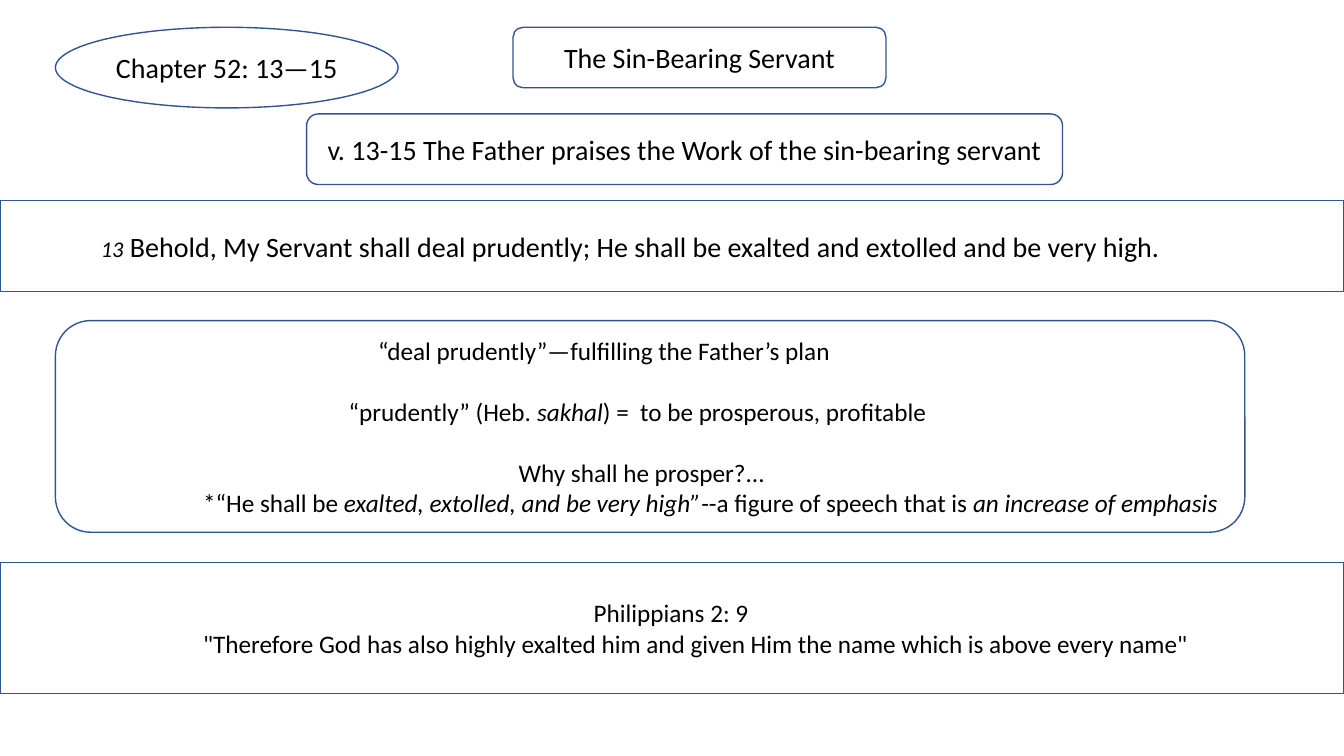
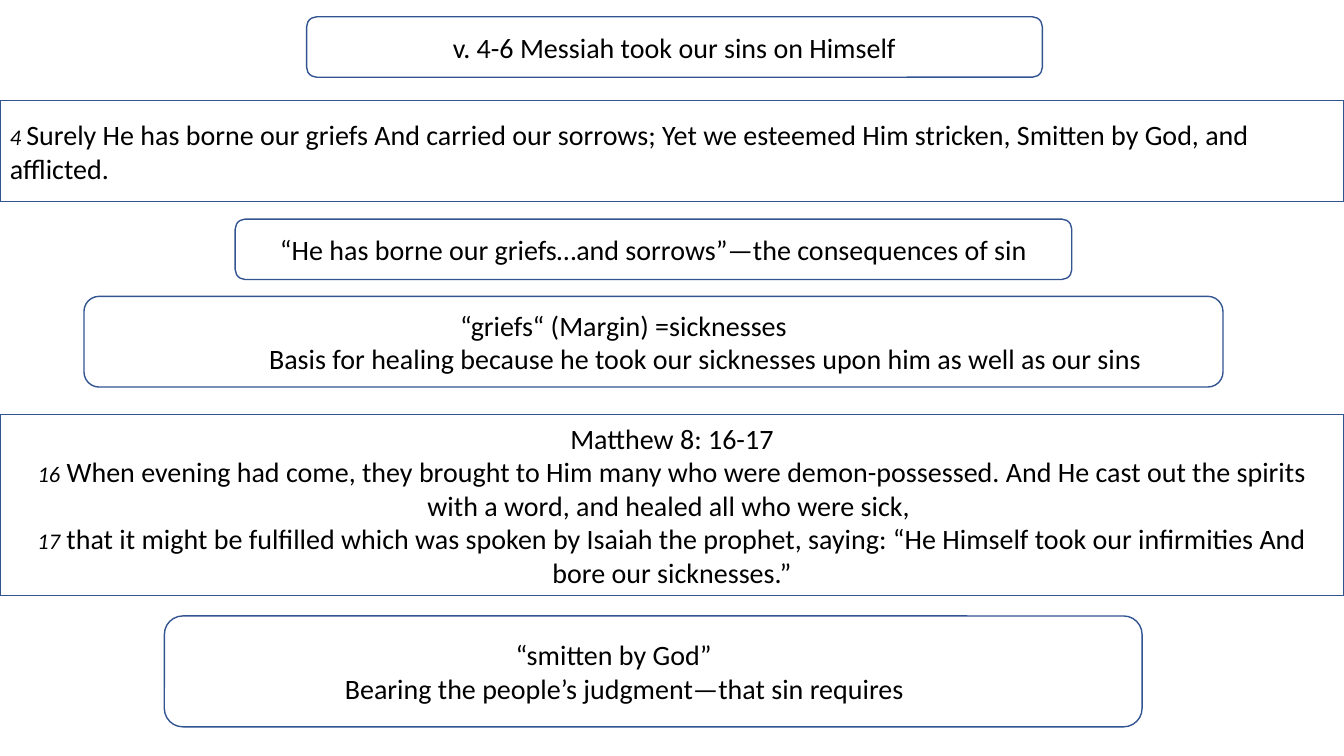
from dataclasses import dataclass

from pptx import Presentation
from pptx.dml.color import RGBColor
from pptx.enum import shapes, text
from pptx.util import Pt

OVAL = shapes.MSO_SHAPE.OVAL
ROUNDED = shapes.MSO_SHAPE.ROUNDED_RECTANGLE
BAND = shapes.MSO_SHAPE.RECTANGLE
LEFT, CENTER = text.PP_ALIGN.LEFT, text.PP_ALIGN.CENTER


@dataclass(frozen=True)
class Theme:
    font: str = "Calibri"
    ink: RGBColor = RGBColor(0, 0, 0)
    paper: RGBColor = RGBColor(0xFF, 0xFF, 0xFF)
    outline: RGBColor = RGBColor(0x32, 0x54, 0x91)
    line_width: float = 1
    body: float = 20
    note: float = 18
    verse: float = 16
    width: float = 960
    height: float = 540


THEME = Theme()


@dataclass(frozen=True)
class Run:
    text: str
    italic: bool = False
    size: float = THEME.body


@dataclass(frozen=True)
class Para:
    runs: tuple
    align: int = LEFT
    indent: float = 0
    before: float = 0


def line(words, size=THEME.body, **layout):
    """A paragraph of one plain run."""
    return Para((Run(words, size=size),), **layout)


def verse(number, words, **layout):
    """A paragraph that opens with a small italic verse number."""
    return Para((Run(number, True, THEME.verse), Run(words)), **layout)


def note(*parts, **layout):
    """A note paragraph; every second part is in italics."""
    runs = tuple(Run(part, i % 2 == 1, THEME.note) for i, part in enumerate(parts))
    return Para(runs, **layout)


def write(tf, paras):
    tf.word_wrap = True
    tf.auto_size = text.MSO_AUTO_SIZE.NONE
    tf.vertical_anchor = text.MSO_ANCHOR.MIDDLE
    for i, para in enumerate(paras):
        p = tf.add_paragraph() if i else tf.paragraphs[0]
        p.alignment = para.align
        p.space_before = Pt(para.before)
        if para.indent:
            p._p.get_or_add_pPr().set("marL", str(Pt(para.indent)))
        for run in para.runs:
            r = p.add_run()
            r.text = run.text
            r.font.name = THEME.font
            r.font.size = Pt(run.size)
            r.font.italic = run.italic
            r.font.color.rgb = THEME.ink


def add_frame(slide, kind, box):
    sp = slide.shapes.add_shape(kind, *map(Pt, box))
    sp.shadow.inherit = False
    sp.fill.background()
    sp.line.color.rgb = THEME.outline
    sp.line.width = Pt(THEME.line_width)
    return sp


def add_box(slide, kind, box, *paras):
    sp = add_frame(slide, kind, box)
    sp.fill.solid()
    sp.fill.fore_color.rgb = THEME.paper
    write(sp.text_frame, paras)


def add_band(slide, top, height, *paras):
    add_box(slide, BAND, (0, top, THEME.width, height), *paras)


def add_titled_slide(prs, title, box):
    """Start a slide whose title sits in a rounded frame."""
    slide = prs.slides.add_slide(prs.slide_layouts[5])
    sp = slide.shapes.title
    sp.left, sp.top, sp.width, sp.height = map(Pt, box)
    write(sp.text_frame, [line(title, align=CENTER)])
    add_frame(slide, ROUNDED, box)
    return slide


def add_praise_slide(prs):
    slide = add_titled_slide(prs, "The Sin-Bearing Servant", (366.5, 19.5, 266.4, 43.2))
    add_box(slide, OVAL, (39.6, 19.5, 244.8, 57.6),
            line("Chapter 52: 13—15", align=CENTER))
    add_box(slide, ROUNDED, (219, 81.4, 540, 50.4),
            line("v. 13-15 The Father praises the Work of the sin-bearing servant", align=CENTER))
    add_band(slide, 143.3, 64.8,
             verse("13", " Behold, My Servant shall deal prudently; "
                   "He shall be exalted and extolled and be very high.", indent=65))
    add_box(slide, ROUNDED, (39.6, 229, 849.6, 151.2),
            note("“deal prudently”—fulfilling the Father’s plan", indent=216),
            note("“prudently” (Heb. ", "sakhal", ") =  to be prosperous, profitable",
                 indent=195, before=22),
            note("Why shall he prosper?...", indent=316.5, before=22),
            note("*“He shall be ", "exalted, extolled, and be very high”",
                 "--a figure of speech that is ", "an increase of emphasis", indent=91))
    add_band(slide, 401.8, 93.6,
             note("Philippians 2: 9", indent=417),
             note('"Therefore God has also highly exalted him and given Him '
                  'the name which is above every name"', indent=138))


def add_messiah_slide(prs):
    slide = add_titled_slide(prs, "v. 4-6 Messiah took our sins on Himself",
                             (219, 12, 525.6, 43.2))
    add_band(slide, 72, 72,
             verse("4 ", "Surely He has borne our griefs And carried our sorrows; "
                   "Yet we esteemed Him stricken, Smitten by God, and afflicted."))
    add_box(slide, ROUNDED, (168, 156.5, 597.6, 43.2),
            line("“He has borne our griefs…and sorrows”—the consequences of sin", align=CENTER))
    add_box(slide, ROUNDED, (60, 211.7, 813.6, 64.8),
            line("“griefs“ (Margin) =sicknesses", indent=258.5),
            line("Basis for healing because he took our sicknesses upon him "
                 "as well as our sins", indent=122))
    add_band(slide, 296, 129.6,
             line("Matthew 8: 16-17", align=CENTER),
             verse("16", " When evening had come, they brought to Him many who were "
                   "demon-possessed. And He cast out the spirits with a word, "
                   "and healed all who were sick, ", align=CENTER),
             verse("17", " that it might be fulfilled which was spoken by Isaiah the prophet, "
                   "saying: “He Himself took our infirmities And bore our sicknesses.”",
                   align=CENTER))
    add_box(slide, ROUNDED, (117.4, 440, 698.4, 79.2),
            line("“smitten by God”", indent=240),
            line("Bearing the people’s judgment—that sin requires", indent=118))


def main():
    prs = Presentation()
    prs.slide_width, prs.slide_height = Pt(THEME.width), Pt(THEME.height)
    add_praise_slide(prs)
    add_messiah_slide(prs)
    prs.save("out.pptx")


if __name__ == "__main__":
    main()
